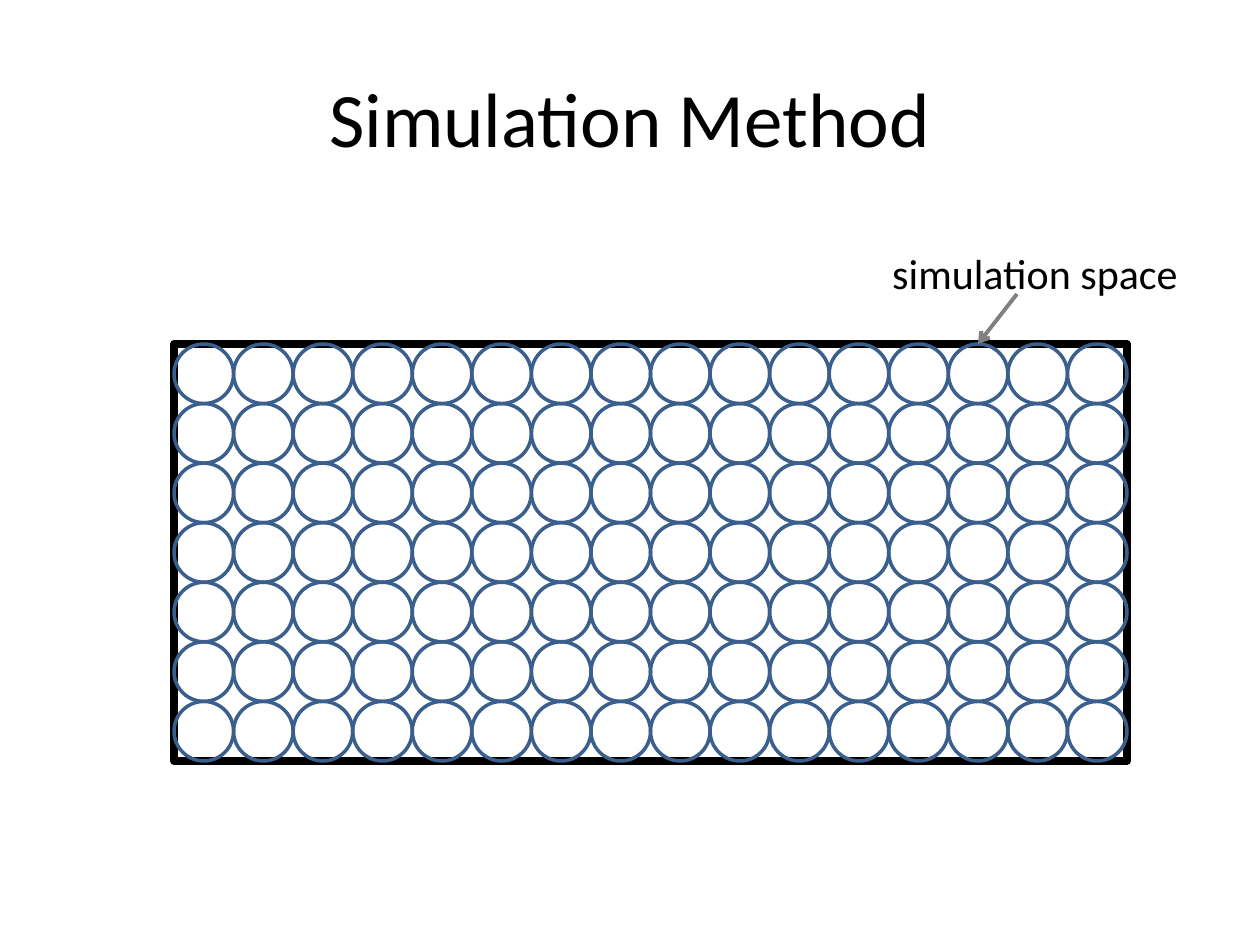
from lxml.etree import SubElement
from pptx import Presentation
from pptx.dml.color import RGBColor
from pptx.enum.shapes import MSO_CONNECTOR, MSO_SHAPE
from pptx.enum.text import MSO_ANCHOR, PP_ALIGN
from pptx.oxml.ns import qn
from pptx.util import Emu, Pt

BLACK = RGBColor(0x00, 0x00, 0x00)
BLUE = RGBColor(0x3A, 0x5F, 0x8C)
GRAY = RGBColor(0x80, 0x80, 0x80)
FONT = "Calibri"
COLUMNS, ROWS = 16, 7
LEFT, TOP, WIDTH, HEIGHT = 174, 344, 953, 417


def px(*lengths):
    return [Emu(round(length * 914400 / 126)) for length in lengths]


def add_outline(shapes, kind, bounds, color, weight):
    shape = shapes.add_shape(kind, *px(*bounds))
    shape.shadow.inherit = False
    shape.fill.background()
    shape.line.color.rgb = color
    shape.line.width = Pt(weight)


deck = Presentation()
deck.slide_width, deck.slide_height = px(1260, 945)
page = deck.slides.add_slide(deck.slide_layouts[6])

add_outline(page.shapes, MSO_SHAPE.RECTANGLE, (LEFT, TOP, WIDTH, HEIGHT), BLACK, 4.5)

particles = page.shapes.add_group_shape()
cell_width, cell_height = WIDTH / COLUMNS, HEIGHT / ROWS
for row in range(ROWS):
    for column in range(COLUMNS):
        bounds = (LEFT + column * cell_width, TOP + row * cell_height, cell_width, cell_height)
        add_outline(particles.shapes, MSO_SHAPE.OVAL, bounds, BLUE, 2)

for text, bounds, size, anchor, wrap in [
    ("Simulation Method", (63, 38, 1134, 157), 44, MSO_ANCHOR.MIDDLE, True),
    ("simulation space", (878, 241, 314, 63), 24, MSO_ANCHOR.TOP, False),
]:
    box = page.shapes.add_textbox(*px(*bounds))
    box.text_frame.word_wrap = wrap
    box.text_frame.vertical_anchor = anchor
    para = box.text_frame.paragraphs[0]
    para.alignment = PP_ALIGN.CENTER
    span = para.add_run()
    span.text = text
    span.font.name = FONT
    span.font.size = Pt(size)
    span.font.color.rgb = BLACK

pointer = page.shapes.add_connector(MSO_CONNECTOR.STRAIGHT, *px(1017, 294, 978, 344))
pointer.line.color.rgb = GRAY
pointer.line.width = Pt(2.25)
SubElement(pointer.line._get_or_add_ln(), qn("a:tailEnd"), type="arrow")
SubElement(pointer._element.spPr, qn("a:effectLst"))

deck.save("out.pptx")
